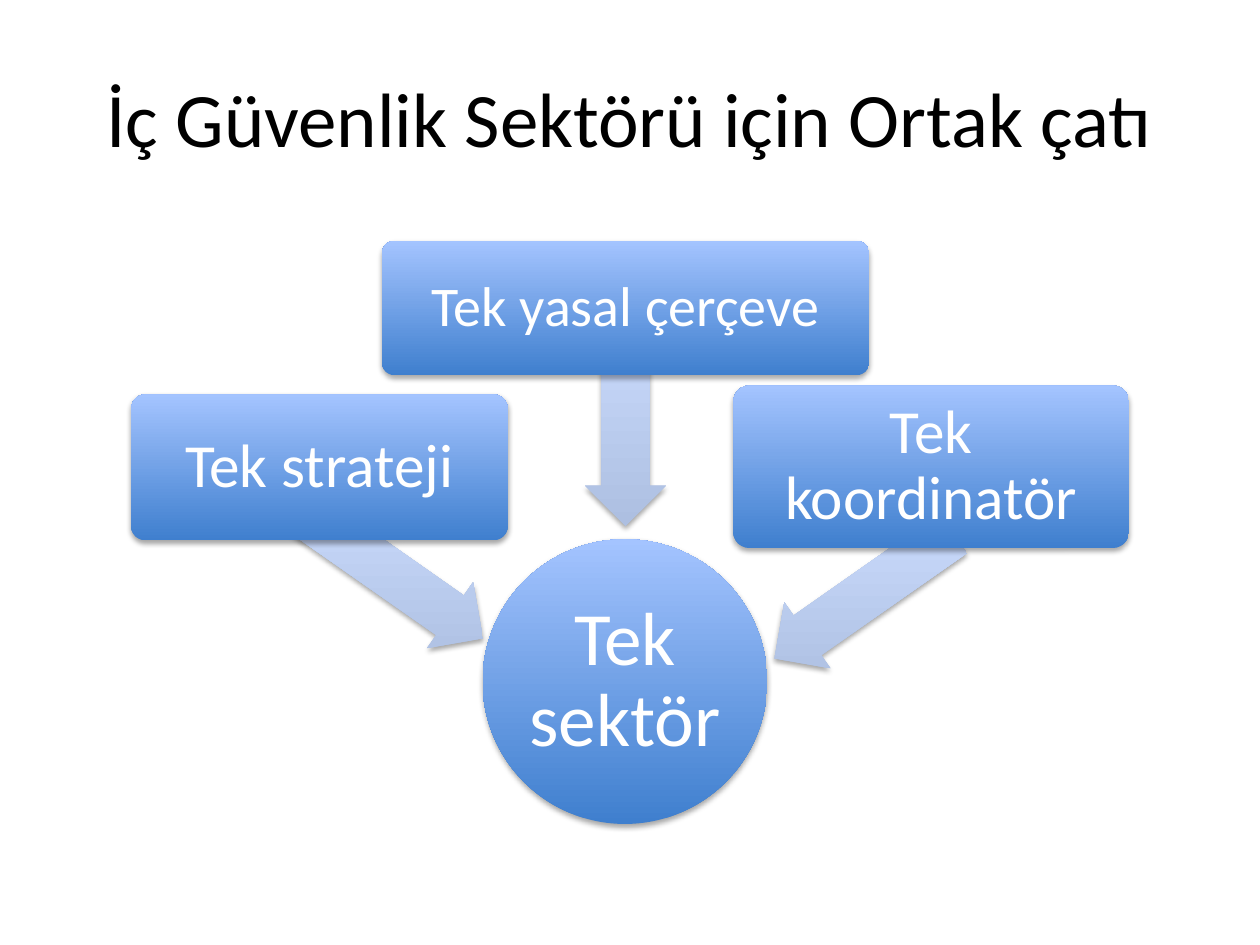
import pptx
import pptx.util
import pptx.dml.color
import pptx.enum.shapes
import pptx.enum.text
import pptx.oxml
import pptx.oxml.ns

Inches = pptx.util.Inches
Pt = pptx.util.Pt
Kind = pptx.enum.shapes.MSO_SHAPE

THEME = {
    "font": "Calibri",
    "ink": "000000",
    "light": "FFFFFF",
    "node": ("3F7FCE", "A4C4FF"),
    "arrow": ("ADBFE1", "CCDDFF"),
    "title": 44,
    "hub": 43,
    "wide": 32,
    "side": 35,
}

TITLE = ("İç Güvenlik Sektörü için Ortak çatı", (0.5, 0.3, 9, 1.25))
HUB = ("Tek sektör", (3.83, 4.28, 2.26, 2.26))
ARROW = (1.73, 0.64)
NODES = [
    ("Tek strateji", "side", (1.04, 3.13, 2.99, 1.16), (2.26, 4.25), 215),
    ("Tek yasal çerçeve", "wide", (3.03, 1.91, 3.87, 1.07), (4.1, 2.99), 270),
    ("Tek koordinatör", "side", (5.82, 3.06, 3.14, 1.29), (5.99, 4.41), 325),
]

SHADE = (
    '<a:effectLst %s><a:outerShdw blurRad="%d" dist="%d" dir="5400000" rotWithShape="0">'
    '<a:srgbClr val="000000"><a:alpha val="35000"/></a:srgbClr>'
    "</a:outerShdw></a:effectLst>"
) % (pptx.oxml.ns.nsdecls("a"), Pt(3.1), Pt(1.8))


def tint(code):
    return pptx.dml.color.RGBColor.from_string(code)


def write(shape, text, size, ink, inset=None, space=None):
    frame = shape.text_frame
    frame.word_wrap = True
    frame.vertical_anchor = pptx.enum.text.MSO_ANCHOR.MIDDLE
    if inset is not None:
        frame.margin_left = frame.margin_right = Inches(inset)
        frame.margin_top = frame.margin_bottom = Inches(inset)
    para = frame.paragraphs[0]
    para.alignment = pptx.enum.text.PP_ALIGN.CENTER
    para.line_spacing = space
    run = para.add_run()
    run.text = text
    run.font.name = THEME["font"]
    run.font.size = Pt(THEME[size])
    run.font.color.rgb = tint(THEME[ink])


def draw(slide, kind, area, look):
    shape = slide.shapes.add_shape(kind, *map(Inches, area))
    shape.line.fill.background()
    shape.fill.gradient()
    shape.fill.gradient_angle = 90
    for stop, code, place in zip(shape.fill.gradient_stops, THEME[look], (0, 1)):
        stop.color.rgb = tint(code)
        stop.position = place
    props = shape._element.spPr
    props.find(pptx.oxml.ns.qn("a:gradFill")).set("rotWithShape", "0")
    props.append(pptx.oxml.parse_xml(SHADE))
    return shape


def main():
    deck = pptx.Presentation()
    deck.slide_width, deck.slide_height = Inches(10), Inches(7.5)
    slide = deck.slides.add_slide(deck.slide_layouts[6])

    text, area = TITLE
    write(slide.shapes.add_textbox(*map(Inches, area)), text, "title", "ink")

    text, area = HUB
    write(draw(slide, Kind.OVAL, area, "node"), text, "hub", "light", 0.03, 0.9)

    for text, size, area, spot, turn in NODES:
        arrow = draw(slide, Kind.LEFT_ARROW, spot + ARROW, "arrow")
        arrow.rotation = turn
        arrow.adjustments[0] = 0.6
        arrow.adjustments[1] = 0.5
        box = draw(slide, Kind.ROUNDED_RECTANGLE, area, "node")
        box.adjustments[0] = 0.1
        write(box, text, size, "light", 0.07, 0.9)

    deck.save("out.pptx")


if __name__ == "__main__":
    main()
